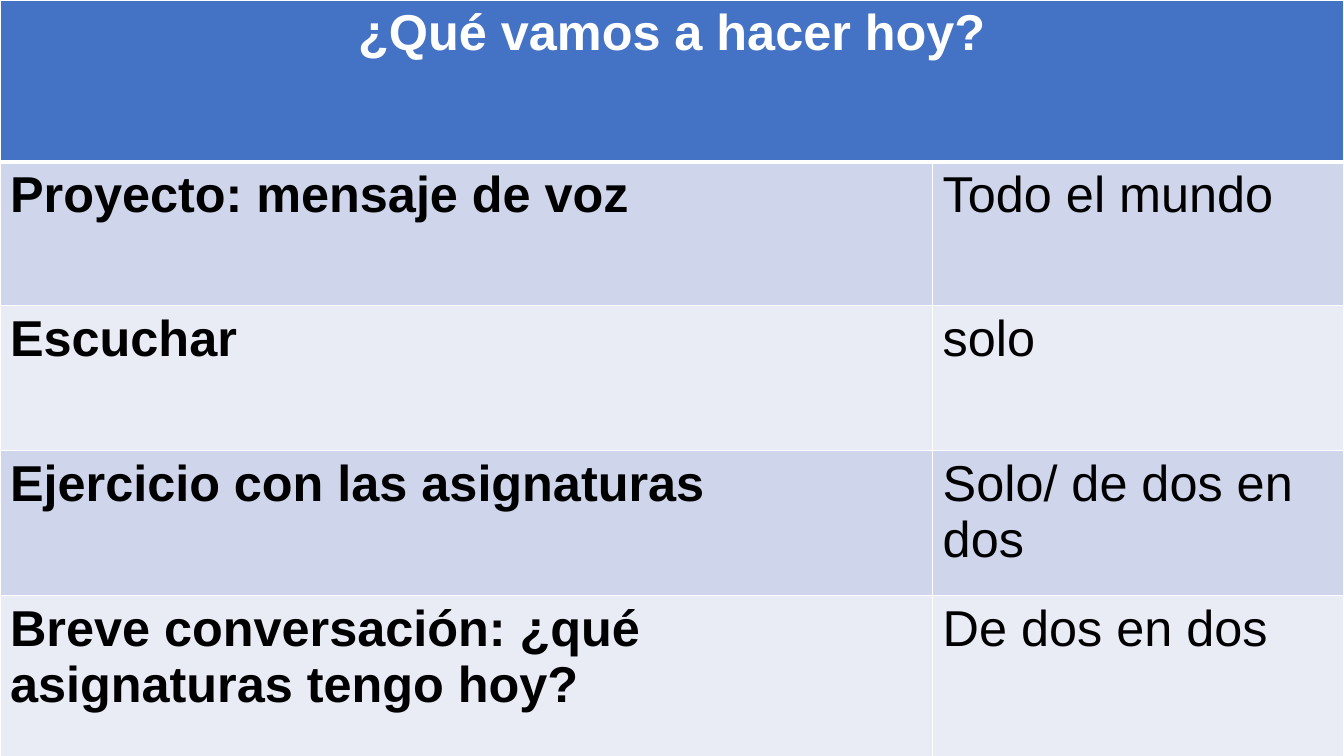
from lxml import etree
from pptx import Presentation
from pptx.dml.color import RGBColor
from pptx.enum.text import PP_ALIGN
from pptx.oxml.ns import qn
from pptx.util import Inches, Pt

CENTER, LEFT = PP_ALIGN.CENTER, PP_ALIGN.LEFT
WHITE = RGBColor(0xFF, 0xFF, 0xFF)
BLACK = RGBColor(0x00, 0x00, 0x00)
BLUE = RGBColor(0x44, 0x72, 0xC4)
BANDS = (RGBColor(0xCF, 0xD5, 0xEA), RGBColor(0xE9, 0xEB, 0xF5))

SLIDE_WIDTH, SLIDE_HEIGHT = 13.33, 7.5
COLUMN_WIDTHS = (9.25, 4.08)
ROW_HEIGHTS = (1.61, 1.42, 1.44, 1.44, 2.32)
HEADING = "¿Qué vamos a hacer hoy?"
ACTIVITIES = (
    ("Proyecto: mensaje de voz", "Todo el mundo"),
    ("Escuchar", "solo"),
    ("Ejercicio con las asignaturas", "Solo/ de dos en dos"),
    ("Breve conversación: ¿qué asignaturas tengo hoy?", "De dos en dos"),
)


def set_borders(cell, top=1, bottom=1):
    """Draw white borders around a cell, with widths in points."""
    properties = cell._tc.get_or_add_tcPr()
    widths = {"a:lnL": 1, "a:lnR": 1, "a:lnT": top, "a:lnB": bottom}
    for position, (tag, width) in enumerate(widths.items()):
        line = etree.Element(qn(tag), w=str(Pt(width)))
        fill = etree.SubElement(line, qn("a:solidFill"))
        etree.SubElement(fill, qn("a:srgbClr"), val=str(WHITE))
        properties.insert(position, line)


def write_cell(cell, text, fill, color=BLACK, bold=False, align=LEFT):
    """Fill a cell and write its formatted text."""
    cell.fill.solid()
    cell.fill.fore_color.rgb = fill
    para = cell.text_frame.paragraphs[0]
    para.alignment = align
    span = para.add_run()
    span.text = text
    span.font.name = "Arial"
    span.font.size = Pt(36)
    span.font.bold = bold
    span.font.color.rgb = color


def add_agenda(page, left, top):
    """Place the lesson agenda table at the given corner."""
    frame = page.shapes.add_table(
        len(ROW_HEIGHTS), len(COLUMN_WIDTHS), Inches(left), Inches(top),
        Inches(sum(COLUMN_WIDTHS)), Inches(sum(ROW_HEIGHTS)))
    table = frame.table
    for column, width in zip(table.columns, COLUMN_WIDTHS):
        column.width = Inches(width)
    for row, height in zip(table.rows, ROW_HEIGHTS):
        row.height = Inches(height)

    heading = table.cell(0, 0)
    heading.merge(table.cell(0, 1))
    write_cell(heading, HEADING, BLUE, color=WHITE, bold=True, align=CENTER)
    for cell in table.rows[0].cells:
        set_borders(cell, bottom=3)

    for row, texts in enumerate(ACTIVITIES, start=1):
        for column, text in enumerate(texts):
            cell = table.cell(row, column)
            write_cell(cell, text, BANDS[(row - 1) % 2], bold=column == 0)
            set_borders(cell, top=3 if row == 1 else 1)


def main():
    """Build and save the agenda slide."""
    deck = Presentation()
    deck.slide_width = Inches(SLIDE_WIDTH)
    deck.slide_height = Inches(SLIDE_HEIGHT)
    page = deck.slides.add_slide(deck.slide_layouts.get_by_name("Blank"))
    add_agenda(page, 0, 0)
    deck.save("out.pptx")


if __name__ == "__main__":
    main()
